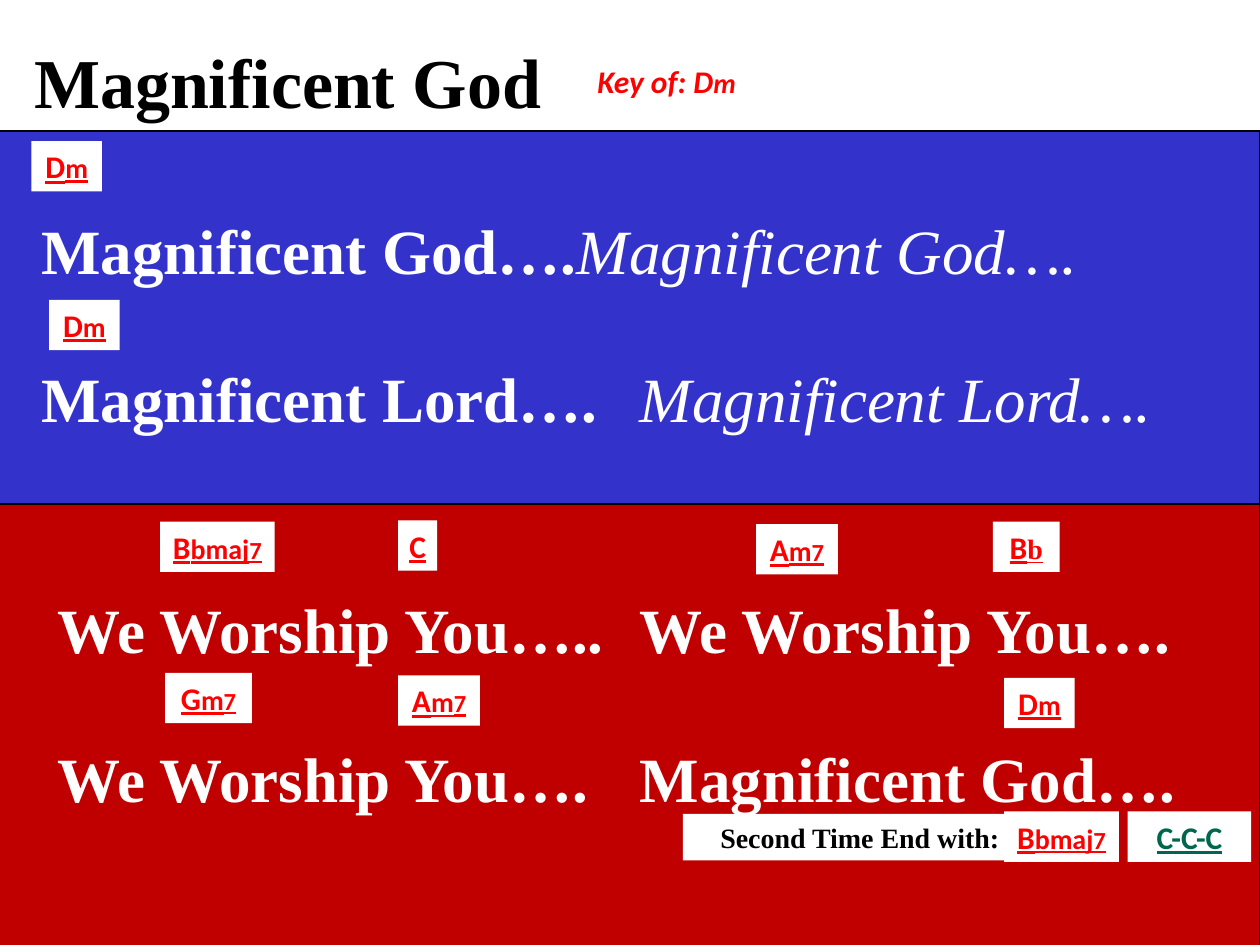
"""Build the chord and lyric slide for the song Magnificent God."""
from typing import NamedTuple

from lxml.etree import SubElement
from pptx import Presentation
from pptx.dml.color import RGBColor
from pptx.enum.shapes import MSO_SHAPE as SHAPE
from pptx.enum.text import MSO_ANCHOR as ANCHOR, PP_ALIGN as ALIGN
from pptx.oxml.ns import qn
from pptx.util import Inches, Pt

SERIF, SANS = "Times New Roman", "Calibri"
WHITE, BLACK, RED, GREEN = "FFFFFF", "000000", "FF0000", "00664D"
BLUE, DARK_RED = "3333CC", "C00000"


class Run(NamedTuple):
    text: str
    size: int
    font: str = SANS
    color: str = RED
    bold: bool = True
    italic: bool = False
    underline: bool = False


class Chord(NamedTuple):
    left: float
    top: float
    width: float
    symbols: tuple
    color: str = RED
    quality_font: str = SANS


class Lyric(NamedTuple):
    call: str
    answer: str
    indent: float
    tab: float
    before: int
    echo: bool = False


CHORDS = [
    Chord(0.25, 1.12, 0.56, ("D", "m")),
    Chord(1.27, 4.14, 0.91, ("B", "bmaj", "7")),
    Chord(1.31, 5.34, 0.69, ("G", "m", "7")),
    Chord(3.16, 4.13, 0.31, ("C",)),
    Chord(0.39, 2.38, 0.56, ("D", "m")),
    Chord(6, 4.16, 0.65, ("A", "m", "7")),
    Chord(7.88, 4.14, 0.53, ("B", "b"), quality_font=SERIF),
    Chord(3.16, 5.36, 0.65, ("A", "m", "7")),
    Chord(7.97, 6.44, 0.91, ("B", "bmaj", "7")),
    Chord(8.95, 6.44, 0.98, ("C-C-C",), GREEN),
    Chord(7.97, 5.38, 0.56, ("D", "m")),
]
LYRICS = [
    Lyric("Magnificent God….", "Magnificent God….", 0.25, 5.12, 0, True),
    Lyric("Magnificent Lord….", "Magnificent Lord….", 0.25, 5.17, 20, True),
    Lyric("We Worship You…..", "We Worship You….", 0.38, 5.07, 67),
    Lyric("We Worship You….", "Magnificent God….", 0.38, 5.07, 20),
]


def rgb(color: str) -> RGBColor:
    return RGBColor.from_string(color)


def add_runs(p, runs: list[Run]) -> None:
    for run in runs:
        r = p.add_run()
        r.text = run.text
        r.font.size, r.font.name = Pt(run.size), run.font
        r.font.bold, r.font.italic = run.bold, run.italic
        r.font.underline = run.underline
        r.font.color.rgb = rgb(run.color)


def add_band(s, top: float, height: float, color: str) -> None:
    sp = s.shapes.add_shape(SHAPE.RECTANGLE, Inches(-0.02), Inches(top), Inches(10.02), Inches(height))
    sp.shadow.inherit = False
    sp.fill.solid()
    sp.fill.fore_color.rgb = rgb(color)
    sp.line.color.rgb = rgb(BLACK)
    sp.line.width = Pt(0.75)


def add_label(s, left: float, top: float, width: float, height: float,
              runs: list[Run], align=ALIGN.CENTER) -> None:
    sp = s.shapes.add_shape(SHAPE.RECTANGLE, Inches(left), Inches(top), Inches(width), Inches(height))
    sp.shadow.inherit = False
    sp.fill.solid()
    sp.fill.fore_color.rgb = rgb(WHITE)
    sp.line.fill.background()
    tf = sp.text_frame
    tf.word_wrap = False
    tf.vertical_anchor = ANCHOR.TOP
    tf.paragraphs[0].alignment = align
    add_runs(tf.paragraphs[0], runs)


def add_chord(s, chord: Chord) -> None:
    fonts = (SANS, chord.quality_font, SANS)
    runs = [Run(text, size, font, chord.color, underline=True)
            for text, size, font in zip(chord.symbols, (18, 16, 14), fonts)]
    add_label(s, chord.left, chord.top, chord.width, 0.4, runs)


def add_lyrics(s, lyrics: list[Lyric]) -> None:
    sp = s.shapes.add_textbox(Inches(-0.02), Inches(1.33), Inches(10.02), Inches(5.25))
    tf = sp.text_frame
    tf.word_wrap = True
    for i, lyric in enumerate(lyrics):
        p = tf.add_paragraph() if i else tf.paragraphs[0]
        p.line_spacing = 1.5
        p.space_before = Pt(lyric.before)
        pPr = p._p.get_or_add_pPr()
        pPr.set("marL", "0")
        pPr.set("indent", str(Inches(lyric.indent)))
        tabs = SubElement(pPr, qn("a:tabLst"))
        SubElement(tabs, qn("a:tab"), pos=str(Inches(lyric.tab)), algn="l")
        add_runs(p, [
            Run(lyric.call + "\t", 36, SERIF, WHITE),
            Run(lyric.answer, 36, SERIF, WHITE, not lyric.echo, lyric.echo),
        ])


def set_title(s, text: str) -> None:
    sp = s.shapes.title
    sp.left, sp.top, sp.width, sp.height = Inches(0.17), Inches(0.25), Inches(4.41), Inches(0.77)
    sp.fill.solid()
    sp.fill.fore_color.rgb = rgb(WHITE)
    tf = sp.text_frame
    tf.word_wrap = False
    tf.vertical_anchor = ANCHOR.BOTTOM
    tf.paragraphs[0].alignment = ALIGN.LEFT
    add_runs(tf.paragraphs[0], [Run(text, 40, SERIF, BLACK)])


def main() -> None:
    prs = Presentation()
    prs.slide_width, prs.slide_height = Inches(10), Inches(7.5)
    s = prs.slides.add_slide(prs.slide_layouts[5])
    set_title(s, "Magnificent God")
    add_band(s, 1.04, 2.96, BLUE)
    add_band(s, 4, 3.67, DARK_RED)
    add_lyrics(s, LYRICS)
    add_label(s, 5.42, 6.46, 2.61, 0.37,
              [Run("Second Time End with:", 16, SERIF, BLACK)], ALIGN.RIGHT)
    for chord in CHORDS:
        add_chord(s, chord)
    add_label(s, 4.58, 0.44, 1.42, 0.4,
              [Run("Key of: D", 18, italic=True), Run("m", 16, italic=True)])
    prs.save("out.pptx")


if __name__ == "__main__":
    main()
